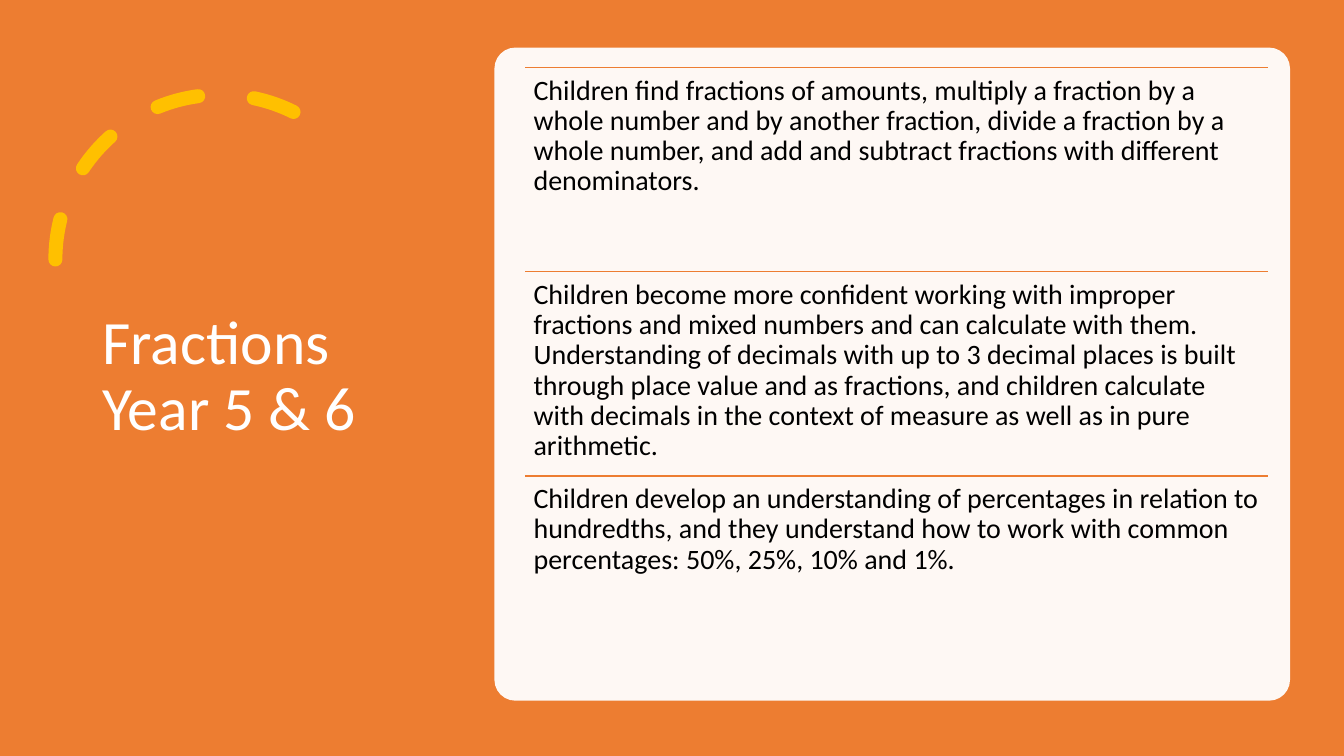
import pptx
import pptx.util
import pptx.dml.color
import pptx.enum.dml
import pptx.enum.shapes
import pptx.enum.text
import pptx.oxml
import pptx.oxml.ns
import lxml.etree

Pt = pptx.util.Pt
RGBColor = pptx.dml.color.RGBColor
SHAPES = pptx.enum.shapes.MSO_SHAPE
ANCHORS = pptx.enum.text.MSO_ANCHOR

# Content
TITLE = "Fractions Year 5 & 6"
STATEMENTS = [
    "Children find fractions of amounts, multiply a fraction by a whole number and by another "
    "fraction, divide a fraction by a whole number, and add and subtract fractions with "
    "different denominators.",
    "Children become more confident working with improper fractions and mixed numbers and can "
    "calculate with them. Understanding of decimals with up to 3 decimal places is built through "
    "place value and as fractions, and children calculate with decimals in the context of "
    "measure as well as in pure arithmetic.",
    "Children develop an understanding of percentages in relation to hundredths, and they "
    "understand how to work with common percentages: 50%, 25%, 10% and 1%.",
]

# Style and layout, in points
FONT = "Calibri"
ORANGE = RGBColor(0xED, 0x7D, 0x31)
YELLOW = RGBColor(0xFF, 0xC0, 0x00)
WHITE = RGBColor(0xFF, 0xFF, 0xFF)
BLACK = RGBColor(0x00, 0x00, 0x00)
SLIDE_WIDTH, SLIDE_HEIGHT = 960, 540
ARC_BOX = (39.6, 67.7, 235.4, 235.4)
TITLE_BOX = (66, 50.4, 232.8, 438.5)
CARD_BOX = (353.2, 34, 568.3, 466.5)
ROW_LEFT, ROW_TOP, ROW_WIDTH, ROW_HEIGHT = 375.1, 48.2, 530.4, 145.9


def add_child(parent, tag, **attributes):
    child = lxml.etree.SubElement(parent, pptx.oxml.ns.qn(tag))
    for name, value in attributes.items():
        child.set(name, value)
    return child


def add_shape(slide, kind, box, fill=None):
    shape = slide.shapes.add_shape(kind, *map(Pt, box))
    shape.shadow.inherit = False
    if fill is None:
        shape.fill.background()
    else:
        shape.fill.solid()
        shape.fill.fore_color.rgb = fill
        shape.line.fill.background()
    return shape


def add_text(slide, text, box, size, color, anchor, side_inset, end_inset):
    frame = slide.shapes.add_textbox(*map(Pt, box)).text_frame
    frame.word_wrap = True
    frame.vertical_anchor = anchor
    frame.margin_left = frame.margin_right = Pt(side_inset)
    frame.margin_top = frame.margin_bottom = Pt(end_inset)
    paragraph = frame.paragraphs[0]
    paragraph.line_spacing = 0.9
    run = paragraph.add_run()
    run.text = text
    run.font.name = FONT
    run.font.size = Pt(size)
    run.font.color.rgb = color


def add_rule(slide, left, top, width):
    rule = slide.shapes.add_connector(
        pptx.enum.shapes.MSO_CONNECTOR.STRAIGHT, Pt(left), Pt(top), Pt(left + width), Pt(top))
    rule.line.color.rgb = ORANGE
    rule.line.width = Pt(1)
    add_child(rule.element.spPr, "a:effectLst")


def main():
    presentation = pptx.Presentation()
    presentation.slide_width = Pt(SLIDE_WIDTH)
    presentation.slide_height = Pt(SLIDE_HEIGHT)
    slide = presentation.slides.add_slide(presentation.slide_layouts[6])

    # Backdrop
    add_shape(slide, SHAPES.RECTANGLE, (0, 0, SLIDE_WIDTH, SLIDE_HEIGHT), ORANGE)

    # Dashed arc, mirrored, with round line ends
    arc = add_shape(slide, SHAPES.ARC, ARC_BOX)
    arc.adjustments[0] = 146.129
    arc.adjustments[1] = 0
    arc.line.color.rgb = YELLOW
    arc.line.width = Pt(10)
    arc.line.dash_style = pptx.enum.dml.MSO_LINE.DASH
    properties = arc.element.spPr
    properties.find(pptx.oxml.ns.qn("a:xfrm")).set("flipH", "1")
    properties.find(pptx.oxml.ns.qn("a:ln")).set("cap", "rnd")

    # Title
    add_text(slide, TITLE, TITLE_BOX, 44, WHITE, ANCHORS.MIDDLE, 7.2, 3.6)

    # Translucent card
    card = add_shape(slide, SHAPES.ROUNDED_RECTANGLE, CARD_BOX, WHITE)
    card.adjustments[0] = 0.032
    card_color = card.element.spPr.find(".//" + pptx.oxml.ns.qn("a:srgbClr"))
    add_child(card_color, "a:alpha", val="95000")

    # Statements, each under a rule
    for index, statement in enumerate(STATEMENTS):
        top = ROW_TOP + index * ROW_HEIGHT
        add_rule(slide, ROW_LEFT, top, ROW_WIDTH)
        add_text(slide, statement, (ROW_LEFT, top, ROW_WIDTH, ROW_HEIGHT),
                 20, BLACK, ANCHORS.TOP, 6, 6)

    presentation.save("out.pptx")


if __name__ == "__main__":
    main()
